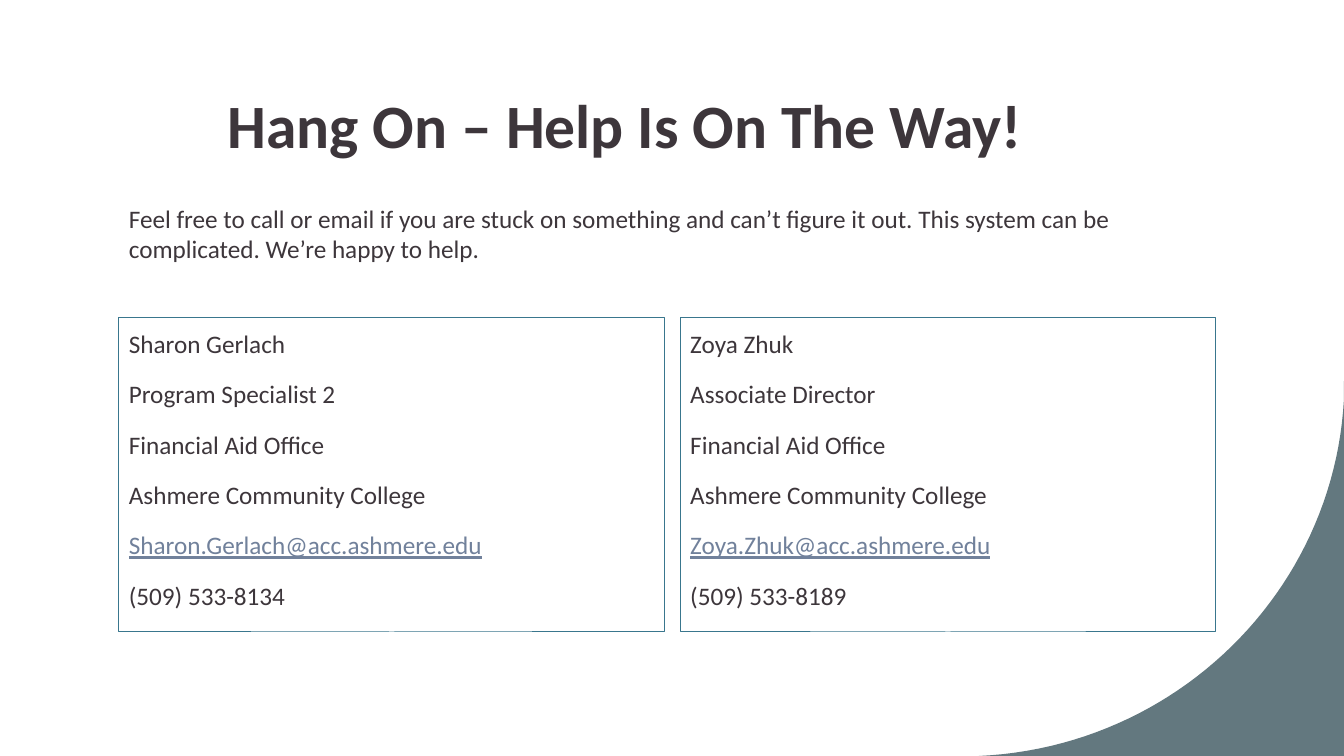
from dataclasses import dataclass

from pptx import Presentation
from pptx import util as u
from pptx.dml import color
from pptx.enum import shapes, text


@dataclass(frozen=True)
class Theme:
    face: str = "Calibri"
    ink: str = "3D363B"
    mail: str = "71819B"
    frame: str = "39768D"
    curve: str = "63787F"
    head: int = 44
    body: int = 18
    rule: float = 0.75


@dataclass(frozen=True)
class Area:
    """Left, top, width and height in percent of the slide."""
    left: float
    top: float
    wide: float
    high: float


@dataclass(frozen=True)
class Card:
    area: Area
    name: str
    role: str
    mail: str
    phone: str


THEME = Theme()
WIDE, HIGH = u.Inches(40 / 3), u.Inches(7.5)
OFFICE = ("Financial Aid Office", "Ashmere Community College")
CARDS = (
    Card(Area(8.85, 42, 40.58, 41.6), "Sharon Gerlach", "Program Specialist 2",
         "Sharon.Gerlach@acc.ashmere.edu", "(509) 533-8134"),
    Card(Area(50.62, 42, 39.83, 41.6), "Zoya Zhuk", "Associate Director",
         "Zoya.Zhuk@acc.ashmere.edu", "(509) 533-8189"),
)
BEND = ((72.83, 100), (87.53, 98.8), (99.23, 78.27), (100, 52.8))
STEPS = 48


def rgb(code: str) -> color.RGBColor:
    return color.RGBColor.from_string(code)


def spot(x: float, y: float) -> tuple[int, int]:
    return round(WIDE * x / 100), round(HIGH * y / 100)


def place(area: Area) -> tuple[int, int, int, int]:
    return spot(area.left, area.top) + spot(area.wide, area.high)


def style(item, form: dict) -> None:
    for key, value in form.items():
        setattr(item, key, value)


def write(para, words: str, tint: str = THEME.ink, **form) -> None:
    run = para.add_run()
    run.text = words
    style(run.font, {"name": THEME.face, "size": u.Pt(THEME.body), **form})
    run.font.color.rgb = rgb(tint)


def add_text(slide, area: Area, anchor=text.MSO_ANCHOR.TOP):
    frame = slide.shapes.add_textbox(*place(area)).text_frame
    style(frame, {"word_wrap": True, "vertical_anchor": anchor})
    return frame.paragraphs[0]


def add_curve(slide) -> None:
    # Points along the cubic bend, closed through the slide's corner
    points = []
    for step in range(STEPS + 1):
        t = step / STEPS
        parts = ((1 - t) ** 3, 3 * t * (1 - t) ** 2, 3 * t * t * (1 - t), t ** 3)
        x, y = (sum(p * knot[i] for p, knot in zip(parts, BEND)) for i in (0, 1))
        points.append(spot(x, y))
    points += [spot(100, 50.4), spot(100, 100), spot(72.22, 100)]
    build = slide.shapes.build_freeform(*points[0])
    build.add_line_segments(points[1:], close=True)
    shape = build.convert_to_shape()
    shape.shadow.inherit = False
    shape.fill.solid()
    shape.fill.fore_color.rgb = rgb(THEME.curve)
    shape.line.fill.background()


def add_card(slide, card: Card) -> None:
    box = slide.shapes.add_shape(shapes.MSO_SHAPE.RECTANGLE, *place(card.area))
    box.shadow.inherit = False
    box.fill.background()
    box.line.color.rgb = rgb(THEME.frame)
    box.line.width = u.Pt(THEME.rule)
    frame = box.text_frame
    style(frame, {"word_wrap": True, "vertical_anchor": text.MSO_ANCHOR.TOP})
    form = {"alignment": text.PP_ALIGN.LEFT, "line_spacing": 1.2,
            "space_before": u.Pt(10)}
    lines = (card.name, card.role, *OFFICE, card.mail, card.phone)
    for i, line in enumerate(lines):
        para = frame.add_paragraph() if i else frame.paragraphs[0]
        style(para, form)
        if line == card.mail:
            write(para, line, THEME.mail, underline=True)
        else:
            write(para, line)


def main() -> None:
    deck = Presentation()
    style(deck, {"slide_width": WIDE, "slide_height": HIGH})
    slide = deck.slides.add_slide(deck.slide_layouts[6])

    # Corner curve
    add_curve(slide)

    # Title
    title = add_text(slide, Area(16.2, 9.87, 67.58, 12), text.MSO_ANCHOR.BOTTOM)
    title.line_spacing = 1.1
    write(title, "Hang On – Help Is On The Way!", size=u.Pt(THEME.head), bold=True)

    # Contact cards
    for card in CARDS:
        add_card(slide, card)

    # Intro
    intro = add_text(slide, Area(8.85, 26.27, 81.6, 9.47))
    write(intro, "Feel free to call or email if you are stuck on something and "
                 "can’t figure it out. This system can be complicated. "
                 "We’re happy to help.")

    deck.save("out.pptx")


if __name__ == "__main__":
    main()
